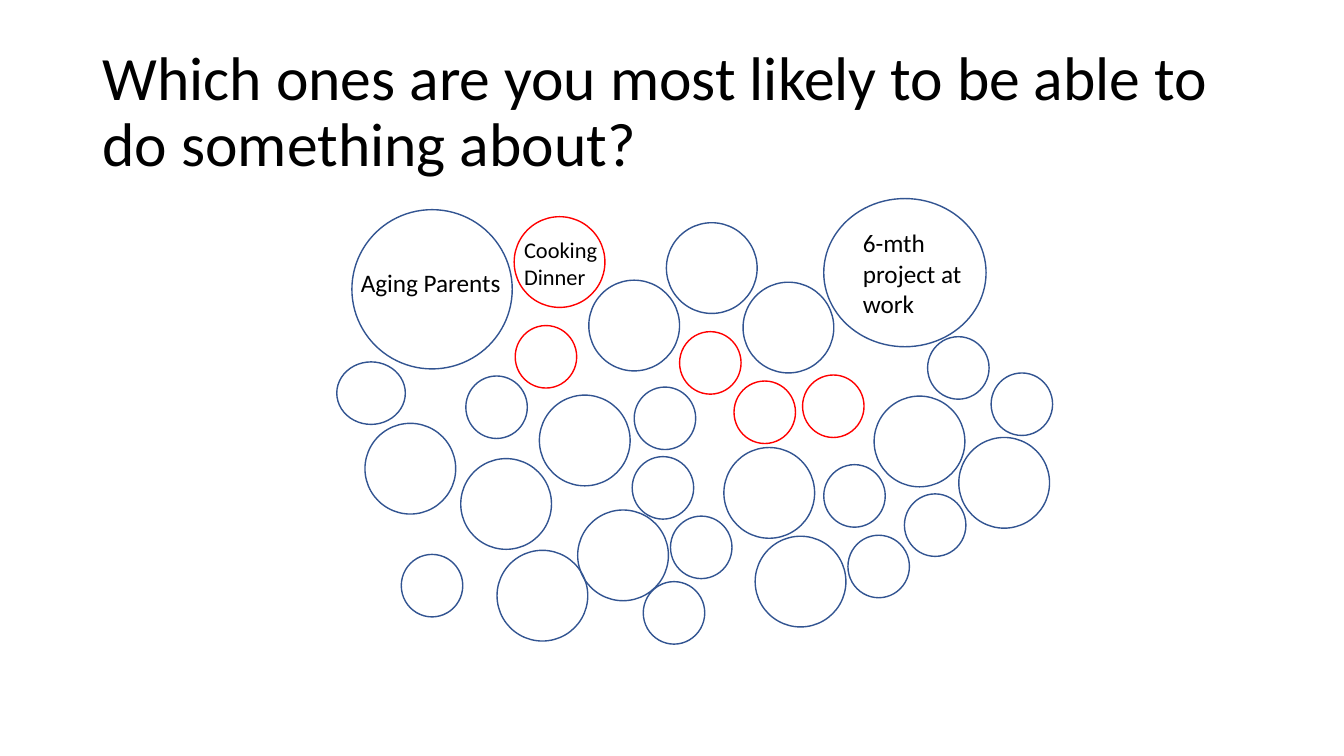
from typing import NamedTuple

from pptx import Presentation
from pptx.dml.color import RGBColor
from pptx.enum.shapes import MSO_SHAPE
from pptx.enum.text import MSO_ANCHOR
from pptx.util import Inches, Pt

COLORS = {"worry": "325491", "actionable": "FF0000", "text": "000000"}
FONT = "Calibri"
ROWS = 75
SLIDE_WIDTH, SLIDE_HEIGHT = Inches(13.33), Inches(7.5)
CELL = SLIDE_HEIGHT / ROWS  # square grid cell


class Size(NamedTuple):
    columns: float
    rows: float


class Bubble(NamedTuple):
    column: float
    row: float
    size: Size
    color: str = "worry"


class Caption(NamedTuple):
    column: float
    row: float
    size: Size
    lines: tuple[str, ...]
    points: int
    anchor: MSO_ANCHOR = MSO_ANCHOR.TOP
    line_spacing: float = 1.0


SMALL, MEDIUM = Size(6.1, 6.2), Size(9, 9)

BUBBLES = [
    Bubble(86.7, 39.3, MEDIUM),
    Bubble(81.7, 19.7, Size(16.1, 14.7)),
    Bubble(51, 21.5, MEDIUM, "actionable"),
    Bubble(81.7, 46.1, SMALL),
    Bubble(39.8, 55, SMALL),
    Bubble(51.1, 32.3, SMALL, "actionable"),
    Bubble(92, 33.4, SMALL),
    Bubble(71.8, 44.4, MEDIUM),
    Bubble(62.9, 38.4, SMALL),
    Bubble(45.7, 45.5, MEDIUM),
    Bubble(33.4, 35.9, Size(6.8, 6.2)),
    Bubble(66.5, 51.2, SMALL),
    Bubble(73.7, 28, MEDIUM),
    Bubble(72.8, 37.8, SMALL, "actionable"),
    Bubble(84.1, 53.1, SMALL),
    Bubble(49.3, 54.6, MEDIUM),
    Bubble(67.4, 32.9, SMALL, "actionable"),
    Bubble(58.4, 27.8, MEDIUM),
    Bubble(62.7, 45.3, SMALL),
    Bubble(53.5, 39.2, MEDIUM),
    Bubble(57.3, 50.6, MEDIUM),
    Bubble(34.9, 20.8, Size(15.9, 15.8)),
    Bubble(46.2, 37.3, SMALL),
    Bubble(95.1, 43.4, MEDIUM),
    Bubble(98.3, 37, SMALL),
    Bubble(66.1, 22.1, MEDIUM),
    Bubble(89.7, 49, SMALL),
    Bubble(79.6, 37.2, SMALL, "actionable"),
    Bubble(74.9, 53.2, MEDIUM),
    Bubble(63.8, 57.7, SMALL),
    Bubble(36.2, 42, MEDIUM),
]

TITLE = Caption(
    9.2, 4, Size(115, 14.5),
    ("Which ones are you most likely to be able to do something about?",),
    44, MSO_ANCHOR.MIDDLE, 0.9,
)
BUBBLE_CAPTIONS = [
    Caption(34.8, 26, Size(16, 4), ("Aging Parents",), 18),
    Caption(51, 22.9, Size(9.4, 6.4), ("Cooking", "Dinner"), 16),
    Caption(84.6, 22.1, Size(12.2, 10.1), ("6-mth project at work",), 18),
]


def grid_box(item: Bubble | Caption) -> list[int]:
    """Left, top, width and height of an item in EMU."""
    return [round(cells * CELL) for cells in (item.column, item.row, *item.size)]


def draw_bubble(shapes, bubble: Bubble) -> None:
    circle = shapes.add_shape(MSO_SHAPE.FLOWCHART_CONNECTOR, *grid_box(bubble))
    circle.shadow.inherit = False
    circle.fill.background()
    circle.line.color.rgb = RGBColor.from_string(COLORS[bubble.color])
    circle.line.width = Pt(1)


def draw_caption(shapes, caption: Caption) -> None:
    frame = shapes.add_textbox(*grid_box(caption)).text_frame
    frame.word_wrap = True
    frame.vertical_anchor = caption.anchor
    for index, line in enumerate(caption.lines):
        paragraph = frame.add_paragraph() if index else frame.paragraphs[0]
        paragraph.line_spacing = caption.line_spacing
        run = paragraph.add_run()
        run.text = line
        run.font.name = FONT
        run.font.size = Pt(caption.points)
        run.font.color.rgb = RGBColor.from_string(COLORS["text"])


def main() -> None:
    presentation = Presentation()
    presentation.slide_width = SLIDE_WIDTH
    presentation.slide_height = SLIDE_HEIGHT
    blank_layout = presentation.slide_layouts[6]
    shapes = presentation.slides.add_slide(blank_layout).shapes

    draw_caption(shapes, TITLE)
    for bubble in BUBBLES:
        draw_bubble(shapes, bubble)
    for caption in BUBBLE_CAPTIONS:
        draw_caption(shapes, caption)
    presentation.save("out.pptx")


if __name__ == "__main__":
    main()
